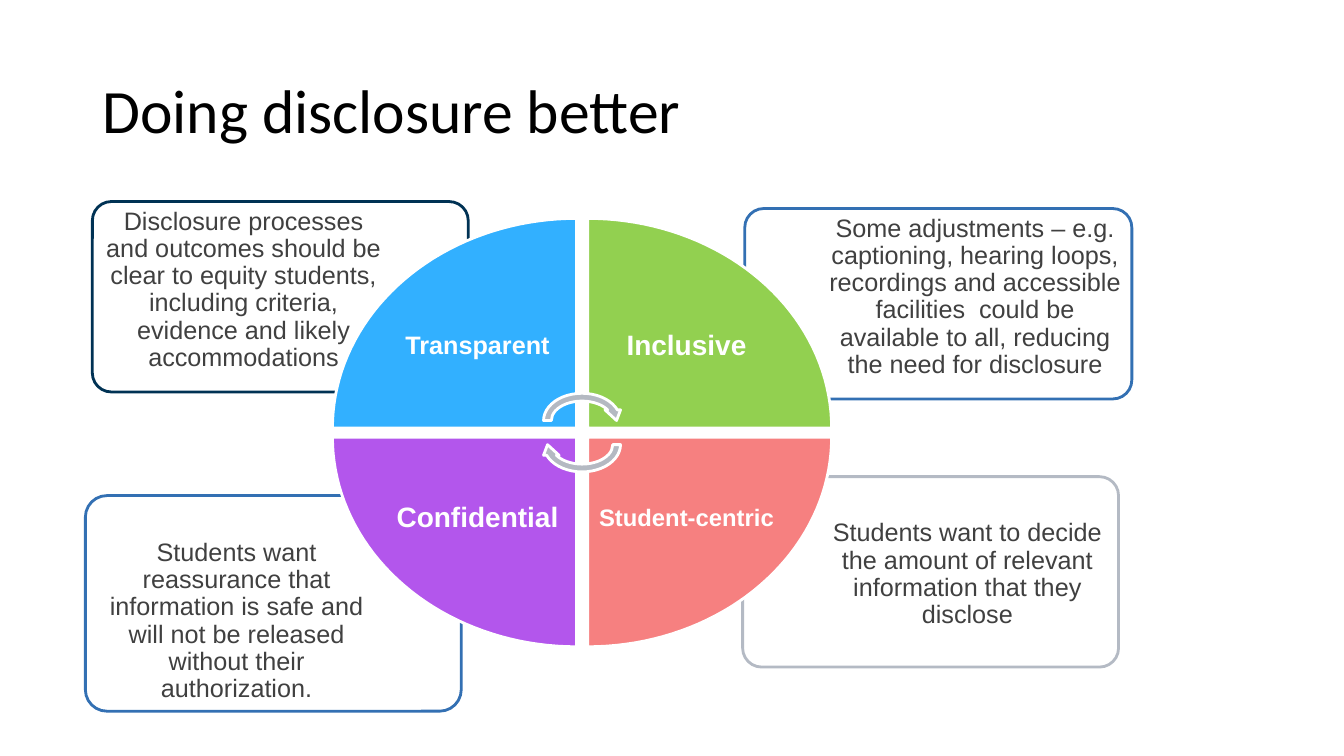
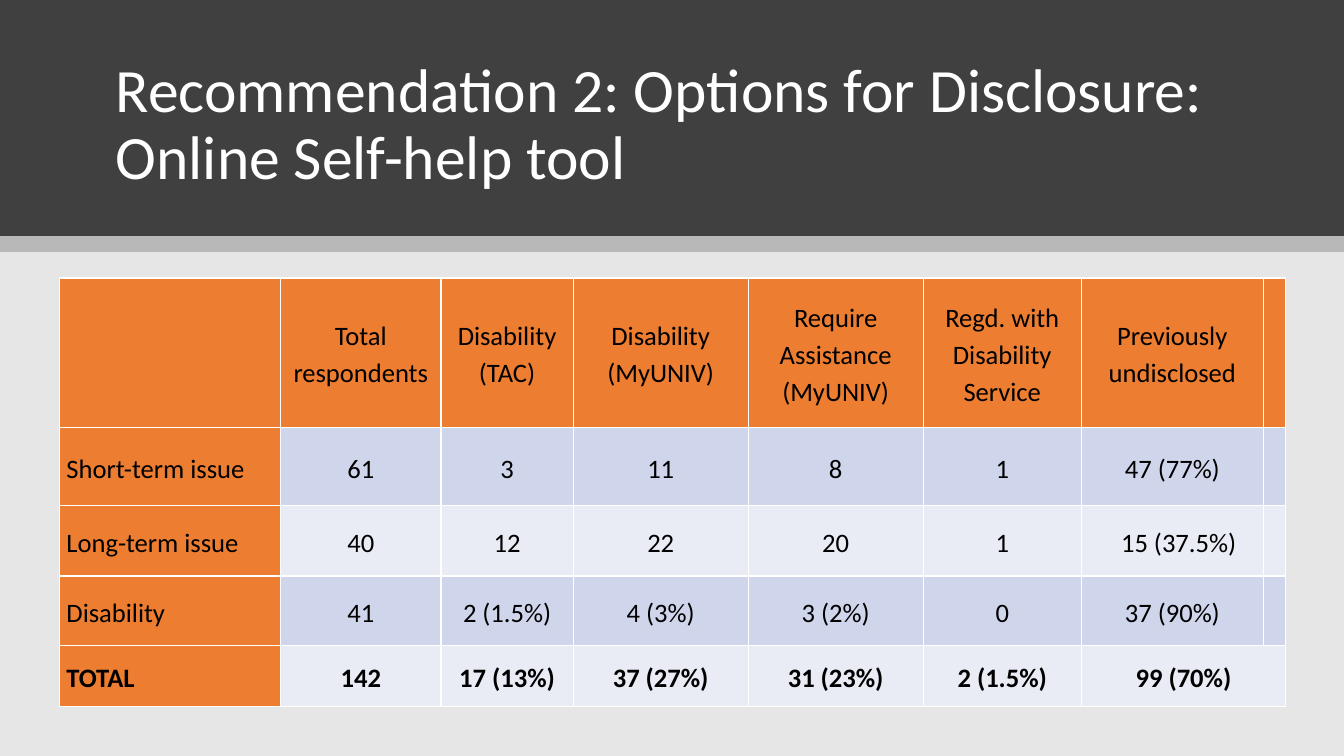
from itertools import product
from math import cos, pi, sin

from lxml.etree import SubElement
from pptx import Presentation
from pptx.dml.color import RGBColor
from pptx.enum.shapes import MSO_SHAPE as Preset
from pptx.enum.text import MSO_ANCHOR as Anchor, MSO_AUTO_SIZE as AutoSize, PP_ALIGN as Align
from pptx.oxml.ns import qn
from pptx.util import Pt

COLORS = {
    "white": "FFFFFF", "black": "000000", "charcoal": "404040", "paper": "E7E6E6",
    "navy": "003254", "blue": "3370B3", "silver": "B4BAC4", "arrow": "B4B9C2",
    "sky": "32B0FF", "green": "92D050", "purple": "B356EC", "coral": "F68080",
    "orange": "ED7D31", "band_dark": "CFD5EA", "band_light": "E9EBF5",
}
SLIDE_WIDTH, SLIDE_HEIGHT = 960, 540

THEMES = [
    dict(name="Transparent", size=18, fill="sky", outline="navy", side=(-1, -1),
         box=(66, 144, 268.5, 136),
         detail="Disclosure processes and outcomes should be clear to equity students, "
                "including criteria, evidence and likely accommodations"),
    dict(name="Inclusive", size=20, fill="green", outline="blue", side=(1, -1),
         box=(532, 149, 276.5, 136),
         detail="Some adjustments – e.g. captioning, hearing loops, recordings and accessible "
                "facilities  could be available to all, reducing the need for disclosure"),
    dict(name="Student-centric", size=17, fill="coral", outline="silver", side=(1, 1),
         box=(530.5, 340.5, 268.5, 136),
         detail="Students want to decide the amount of relevant information that they disclose"),
    dict(name="Confidential", size=20, fill="purple", outline="blue", side=(-1, 1),
         box=(61, 354, 268.5, 154),
         detail="Students want reassurance that information is safe and will not be released "
                "without their authorization."),
]

COLUMN_WIDTHS = [158, 114.5, 94.5, 125, 125, 113, 130, 16]
ROW_HEIGHTS = [107, 55.5, 50.5, 49.5, 43.5]
RESPONSES = [
    ["", "Total respondents", "Disability (TAC)", "Disability (MyUNIV)",
     "Require Assistance (MyUNIV)", "Regd. with Disability Service", "Previously undisclosed", ""],
    ["Short-term issue", "61", "3", "11", "8", "1", "47 (77%)", ""],
    ["Long-term issue", "40", "12", "22", "20", "1", "15 (37.5%)", ""],
    ["Disability", "41", "2 (1.5%)", "4 (3%)", "3 (2%)", "0", "37 (90%)", ""],
    ["TOTAL", "142", "17 (13%)", "37 (27%)", "31 (23%)", "2 (1.5%)", "99 (70%)", ""],
]


def rgb(name):
    """Look up a named colour."""
    return RGBColor.from_string(COLORS[name])


def set_all(target, formats):
    """Set every attribute in a dict of format values."""
    for attribute, value in formats.items():
        setattr(target, attribute, value)


def points(box):
    """Turn a box of numbers into lengths."""
    return [Pt(value) for value in box]


def margins(left, top, right, bottom):
    """Make the four margin formats."""
    return dict(margin_left=Pt(left), margin_top=Pt(top),
                margin_right=Pt(right), margin_bottom=Pt(bottom))


def write(frame, text, color, font, paragraph, frame_formats):
    """Write one formatted paragraph into a text frame."""
    set_all(frame, frame_formats)
    frame.text = text
    line = frame.paragraphs[0]
    set_all(line, paragraph)
    set_all(line.font, font)
    line.font.color.rgb = rgb(color)


def paint(shape, fill, outline=None, opacity=100):
    """Give a shape its fill, outline and opacity."""
    shape.shadow.inherit = False
    shape.fill.solid()
    shape.fill.fore_color.rgb = rgb(fill)
    if opacity < 100:
        tint = shape.element.spPr.find(qn("a:solidFill"))[0]
        SubElement(tint, qn("a:alpha")).set("val", str(opacity * 1000))
    if outline:
        shape.line.color.rgb = rgb(outline)
        shape.line.width = Pt(2)
    else:
        shape.line.fill.background()


def add_band(slide, box, fill, opacity=100):
    """Add a plain rectangle."""
    paint(slide.shapes.add_shape(Preset.RECTANGLE, *points(box)), fill, opacity=opacity)


def place_title(slide, text, box, color, anchor):
    """Place the title in front of what is already on the slide."""
    title = slide.shapes.title
    set_all(title, dict(zip(("left", "top", "width", "height"), points(box))))
    write(title.text_frame, text, color, dict(name="Calibri", size=Pt(44)),
          dict(alignment=Align.LEFT, line_spacing=0.9),
          dict(vertical_anchor=anchor, word_wrap=True, auto_size=AutoSize.NONE))
    title.element.getparent().append(title.element)


def add_callout(slide, theme):
    """Add the rounded box that explains one theme."""
    callout = slide.shapes.add_shape(Preset.ROUNDED_RECTANGLE, *points(theme["box"]))
    callout.adjustments[0] = 0.1
    paint(callout, "white", theme["outline"], opacity=90)
    across, down = theme["side"]
    near, beside_wheel, toward_middle = 1, 53.5, 27
    insets = margins(beside_wheel if across > 0 else near, toward_middle if down > 0 else near,
                     beside_wheel if across < 0 else near, toward_middle if down < 0 else near)
    write(callout.text_frame, theme["detail"], "charcoal", dict(name="Arial", size=Pt(18)),
          dict(alignment=Align.CENTER, line_spacing=0.9),
          dict(insets, word_wrap=True, vertical_anchor=Anchor.TOP))


def add_quadrant(slide, theme, corner, radii):
    """Add a quarter of the wheel that opens away from its inner corner."""
    (corner_x, corner_y), (radius_x, radius_y) = corner, radii
    across, down = theme["side"]
    steps = 40
    arc = [(Pt(corner_x + across * radius_x * cos(step * pi / 2 / steps)),
            Pt(corner_y + down * radius_y * sin(step * pi / 2 / steps)))
           for step in range(steps + 1)]
    outline = slide.shapes.build_freeform(Pt(corner_x), Pt(corner_y))
    outline.add_line_segments(arc, close=True)
    quadrant = outline.convert_to_shape()
    paint(quadrant, theme["fill"], "white")
    inner, outer = 6.5, 39.5
    insets = margins(outer if across < 0 else inner, outer if down < 0 else inner,
                     outer if across > 0 else inner, outer if down > 0 else inner)
    write(quadrant.text_frame, theme["name"], "white",
          dict(name="Arial", size=Pt(theme["size"]), bold=True),
          dict(alignment=Align.CENTER, line_spacing=0.9),
          dict(insets, word_wrap=True, vertical_anchor=Anchor.MIDDLE))


def add_wheel(slide, box):
    """Add the four quadrants and the two turning arrows inside a box."""
    left, top, width, height = box
    gap_x, gap_y = 8, 6.5
    center_x, center_y = left + width / 2, top + height / 2
    radii = (width - gap_x) / 2, (height - gap_y) / 2
    for theme in THEMES:
        across, down = theme["side"]
        add_quadrant(slide, theme, (center_x + across * gap_x / 2, center_y + down * gap_y / 2),
                     radii)
    arrow_width, arrow_height, offset = 60.5, 44.5, 8.6
    for down, rotation in ((-1, 0), (1, 180)):
        arrow = slide.shapes.add_shape(Preset.CIRCULAR_ARROW, *points((
            center_x - arrow_width / 2, center_y + down * offset - arrow_height / 2,
            arrow_width, arrow_height)))
        arrow.rotation = rotation
        paint(arrow, "arrow", "white")


def add_borders(cell):
    """Draw thin white borders on all sides of a cell."""
    properties = cell._tc.get_or_add_tcPr()
    for position, side in enumerate(("lnL", "lnR", "lnT", "lnB")):
        border = properties.makeelement(qn(f"a:{side}"), {"w": str(Pt(1))})
        fill = SubElement(border, qn("a:solidFill"))
        SubElement(fill, qn("a:srgbClr")).set("val", COLORS["white"])
        properties.insert(position, border)


def add_responses(slide, left, top):
    """Add the table of survey responses."""
    frame = slide.shapes.add_table(len(ROW_HEIGHTS), len(COLUMN_WIDTHS), *points(
        (left, top, sum(COLUMN_WIDTHS), sum(ROW_HEIGHTS))))
    table = frame.table
    set_all(table, dict(first_row=False, horz_banding=False))
    for column, width in zip(table.columns, COLUMN_WIDTHS):
        column.width = Pt(width)
    for row, height in zip(table.rows, ROW_HEIGHTS):
        row.height = Pt(height)
    last_row = len(ROW_HEIGHTS) - 1
    for row, column in product(range(len(ROW_HEIGHTS)), range(len(COLUMN_WIDTHS))):
        cell, text = table.cell(row, column), RESPONSES[row][column]
        heading = row == 0 or column == 0
        cell.fill.solid()
        cell.fill.fore_color.rgb = rgb(
            "orange" if heading else "band_dark" if row % 2 else "band_light")
        add_borders(cell)
        indent = 9 if text == "15 (37.5%)" else 0
        set_all(cell, dict(margins(5 + indent, 0, 5, 0), vertical_anchor=Anchor.MIDDLE))
        if text:
            write(cell.text_frame, text, "black",
                  dict(name="Calibri", size=Pt(19), bold=row == last_row),
                  dict(alignment=Align.CENTER if column else Align.JUSTIFY,
                       line_spacing=1.15, space_before=Pt(12)), {})
    table.cell(last_row, 6).merge(table.cell(last_row, 7))


def build_disclosure(slide):
    """Build the slide with the wheel of four themes."""
    place_title(slide, "Doing disclosure better", (66, 29, 828, 104.5), "black", Anchor.MIDDLE)
    for theme in reversed(THEMES):
        add_callout(slide, theme)
    add_wheel(slide, (237.5, 156, 356.5, 306))


def build_recommendation(slide):
    """Build the slide with the table of responses."""
    header_height, strip_height = 168.5, 11.5
    add_band(slide, (0, 0, SLIDE_WIDTH, SLIDE_HEIGHT), "paper")
    add_band(slide, (0, 0, SLIDE_WIDTH, header_height), "charcoal")
    place_title(slide, "Recommendation 2: Options for Disclosure: Online Self-help tool",
                (75.5, 34, 809.5, 107), "white", Anchor.BOTTOM)
    add_band(slide, (0, header_height, SLIDE_WIDTH, strip_height), "black", opacity=20)
    add_responses(slide, 42.5, 198.5)


def main():
    """Build and save the presentation."""
    deck = Presentation()
    set_all(deck, dict(slide_width=Pt(SLIDE_WIDTH), slide_height=Pt(SLIDE_HEIGHT)))
    title_only = deck.slide_layouts[5]
    for build in (build_disclosure, build_recommendation):
        build(deck.slides.add_slide(title_only))
    deck.save("out.pptx")


if __name__ == "__main__":
    main()
